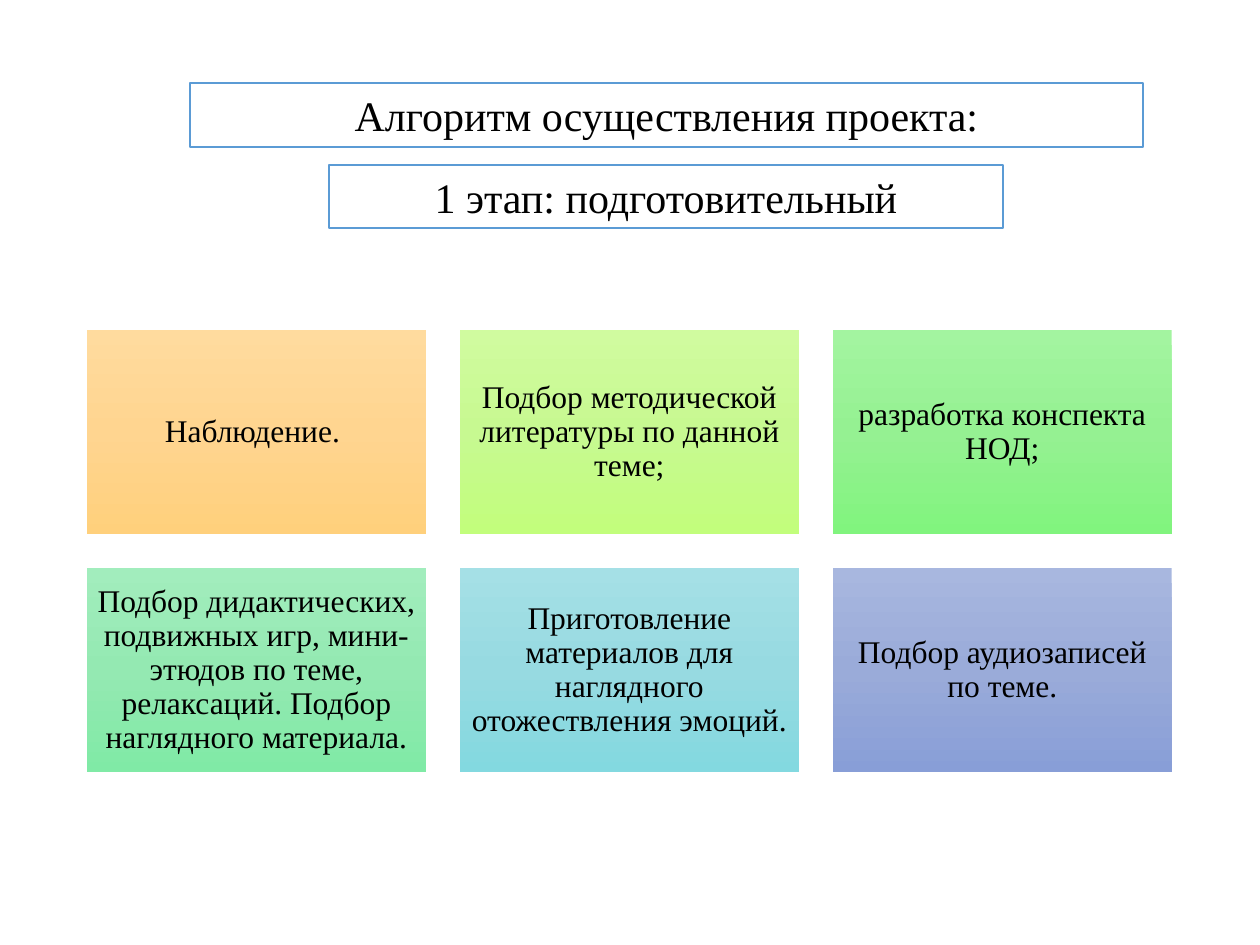
from copy import deepcopy
from dataclasses import dataclass

from pptx import Presentation
from pptx.dml.color import RGBColor
from pptx.enum.shapes import MSO_SHAPE
from pptx.enum.text import MSO_ANCHOR, MSO_AUTO_SIZE, PP_ALIGN
from pptx.oxml.ns import qn
from pptx.util import Inches, Pt


@dataclass(frozen=True)
class Theme:
    font: str = "Times New Roman"
    text: str = "000000"
    paper: str = "FFFFFF"
    outline: str = "5B9BD5"
    heading_size: int = 24
    card_size: int = 18
    orange: tuple = ("FFDB9E", "FFD590", "FFD07C")
    lime: tuple = ("D0FB9F", "C7F991", "C2FE7C")
    green: tuple = ("A3F4A0", "95F192", "81F47E")
    mint: tuple = ("A2EDBD", "94E9B2", "80EAA6")
    aqua: tuple = ("A5E0E6", "97DAE1", "83D9E0")
    blue: tuple = ("A8B7DF", "9AABD9", "889ED7")


def write_text(box, text, *, font, size, color, anchor, spacing=1.0, inset=None):
    frame = box.text_frame
    frame.word_wrap = True
    frame.vertical_anchor = anchor
    if inset is not None:
        frame.margin_left = frame.margin_right = Inches(inset)
        frame.margin_top = frame.margin_bottom = Inches(inset)
    para = frame.paragraphs[0]
    para.alignment = PP_ALIGN.CENTER
    para.line_spacing = spacing
    span = para.add_run()
    span.text = text
    span.font.name = font
    span.font.size = Pt(size)
    span.font.color.rgb = RGBColor.from_string(color)


class Painter:
    def __init__(self, page, theme):
        self.page = page
        self.theme = theme

    def rectangle(self, left, top, width, height):
        box = self.page.shapes.add_shape(
            MSO_SHAPE.RECTANGLE, Inches(left), Inches(top), Inches(width), Inches(height)
        )
        box.shadow.inherit = False
        return box

    def heading(self, text, left, top, width, height):
        box = self.rectangle(left, top, width, height)
        box.fill.solid()
        box.fill.fore_color.rgb = RGBColor.from_string(self.theme.paper)
        box.line.color.rgb = RGBColor.from_string(self.theme.outline)
        box.line.width = Pt(1)
        write_text(box, text, font=self.theme.font, size=self.theme.heading_size,
                   color=self.theme.text, anchor=MSO_ANCHOR.TOP)
        box.text_frame.auto_size = MSO_AUTO_SIZE.SHAPE_TO_FIT_TEXT

    def card(self, text, colors, left, top, width, height):
        box = self.rectangle(left, top, width, height)
        box.line.fill.background()
        self.gradient(box, colors)
        write_text(box, text, font=self.theme.font, size=self.theme.card_size,
                   color=self.theme.text, anchor=MSO_ANCHOR.MIDDLE, spacing=0.9, inset=0.07)

    def gradient(self, box, colors):
        box.fill.gradient()
        box.fill.gradient_angle = 270
        stop_list = box.element.spPr.find(qn("a:gradFill")).find(qn("a:gsLst"))
        stop_list.insert(1, deepcopy(stop_list[0]))
        for stop, color, position in zip(box.fill.gradient_stops, colors, (0, 0.5, 1)):
            stop.color.rgb = RGBColor.from_string(color)
            stop.position = position


def main():
    deck = Presentation()
    deck.slide_width, deck.slide_height = Inches(10), Inches(7.5)
    theme = Theme()
    painter = Painter(deck.slides.add_slide(deck.slide_layouts[6]), theme)

    cards = [
        ("Наблюдение. ", theme.orange),
        ("Подбор методической литературы по данной теме;", theme.lime),
        ("разработка конспекта НОД;", theme.green),
        ("Подбор дидактических, подвижных игр, мини-этюдов по теме, релаксаций. "
         "Подбор наглядного материала.", theme.mint),
        ("Приготовление материалов для наглядного отожествления эмоций. ", theme.aqua),
        ("Подбор аудиозаписей по теме.", theme.blue),
    ]
    columns, gap = 3, 0.27
    left, top, width, height = 0.69, 2.62, 2.69, 1.62
    for index, (text, colors) in enumerate(cards):
        row, column = divmod(index, columns)
        painter.card(text, colors, left + column * (width + gap),
                     top + row * (height + gap), width, height)

    painter.heading("Алгоритм осуществления проекта:", 1.51, 0.66, 7.56, 0.51)
    painter.heading("1 этап: подготовительный", 2.61, 1.31, 5.35, 0.5)
    deck.save("out.pptx")


if __name__ == "__main__":
    main()
